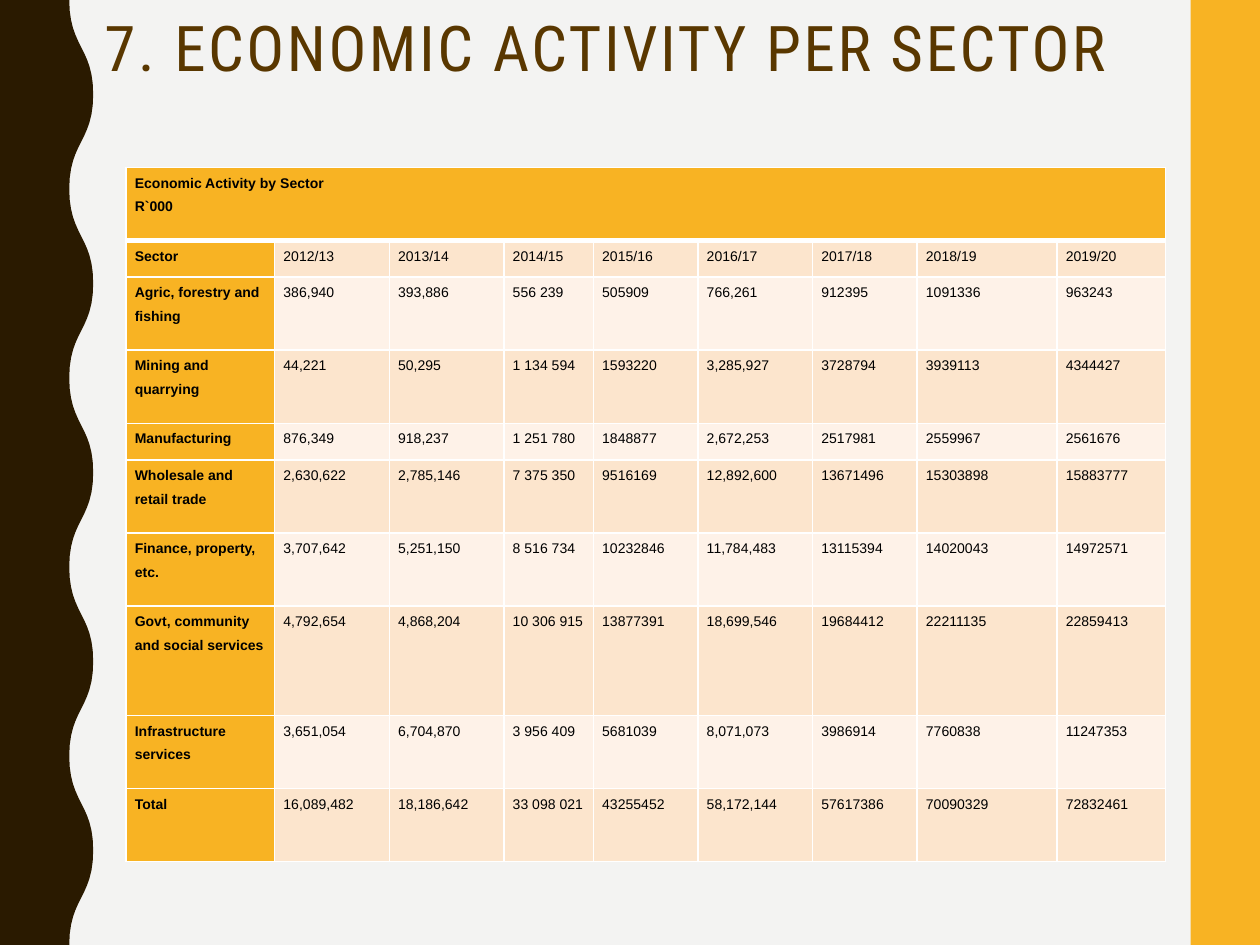
from lxml import etree
from pptx import Presentation
from pptx.dml.color import RGBColor
from pptx.enum.shapes import MSO_SHAPE
from pptx.enum.text import MSO_ANCHOR
from pptx.oxml.ns import qn
from pptx.util import Inches, Pt

RECT = MSO_SHAPE.RECTANGLE
TOP = MSO_ANCHOR.TOP
COLORS = {
    "bg": "F3F3F2", "gold": "F8B323", "brown": "2A1A00", "title": "593700",
    "band": "FCE5CD", "light": "FEF2E8", "text": "000000", "border": "FFFFFF",
}
COL_WIDTHS = [1.18, 0.91, 0.91, 0.71, 0.83, 0.91, 0.83, 1.11, 0.86]
ROW_HEIGHTS = [0.58, 0.29, 0.58, 0.58, 0.29, 0.58, 0.58, 0.87, 0.58, 0.58]
ROWS = [
    ["Economic Activity by Sector\nR`000"],
    ["Sector", "2012/13", "2013/14", "2014/15", "2015/16",
     "2016/17", "2017/18", "2018/19", "2019/20"],
    ["Agric, forestry and fishing", "386,940", "393,886", "556 239", "505909",
     "766,261", "912395", "1091336", "963243"],
    ["Mining and quarrying", "44,221", "50,295", "1 134 594", "1593220",
     "3,285,927", "3728794", "3939113", "4344427"],
    ["Manufacturing", "876,349", "918,237", "1 251 780", "1848877",
     "2,672,253", "2517981", "2559967", "2561676"],
    ["Wholesale and retail trade", "2,630,622", "2,785,146", "7 375 350", "9516169",
     "12,892,600", "13671496", "15303898", "15883777"],
    ["Finance, property, etc.", "3,707,642", "5,251,150", "8 516 734", "10232846",
     "11,784,483", "13115394", "14020043", "14972571"],
    ["Govt, community and social services", "4,792,654", "4,868,204", "10 306 915",
     "13877391", "18,699,546", "19684412", "22211135", "22859413"],
    ["Infrastructure services", "3,651,054", "6,704,870", "3 956 409", "5681039",
     "8,071,073", "3986914", "7760838", "11247353"],
    ["Total", "16,089,482", "18,186,642", "33 098 021", "43255452",
     "58,172,144", "57617386", "70090329", "72832461"],
]


def paint(sp, color):
    """Give a shape a plain fill with no line or shadow."""
    sp.shadow.inherit = False
    sp.fill.solid()
    sp.fill.fore_color.rgb = RGBColor.from_string(COLORS[color])
    sp.line.fill.background()


def set_borders(cell, widths):
    """Draw the left, right, top and bottom borders; they precede the fill in tcPr."""
    tcPr = cell._tc.get_or_add_tcPr()
    for i, (side, width) in enumerate(zip(("lnL", "lnR", "lnT", "lnB"), widths)):
        ln = etree.Element(qn("a:" + side), w=str(Pt(width)))
        fill = etree.SubElement(ln, qn("a:solidFill"))
        etree.SubElement(fill, qn("a:srgbClr"), val=COLORS["border"])
        tcPr.insert(i, ln)


prs = Presentation()
prs.slide_width, prs.slide_height = Inches(10), Inches(7.5)
s = prs.slides.add_slide(prs.slide_layouts[6])
s.background.fill.solid()
s.background.fill.fore_color.rgb = RGBColor.from_string(COLORS["bg"])

# Right-hand bars
for left, width in ((9.77, 0.23), (9.45, 0.55)):
    paint(s.shapes.add_shape(RECT, Inches(left), 0, Inches(width), Inches(7.5)), "gold")

# Wavy left edge: ten S-curves, alternately out and back
HALF_WAVE, STEPS = 0.75, 12
wave = []
for n in range(10):
    for k in range(1, STEPS + 1):
        t = k / STEPS
        swing = 3 * t**2 - 2 * t**3
        x = 0.55 + 0.19 * (swing if n % 2 == 0 else 1 - swing)
        y = HALF_WAVE * (n + 1.5 * t * (1 - t) + t**3)
        wave.append((Inches(x), Inches(y)))
fb = s.shapes.build_freeform(0, 0)
fb.add_line_segments([(Inches(0.55), 0)] + wave + [(0, Inches(7.5))], close=True)
paint(fb.convert_to_shape(), "brown")

# Title
tf = s.shapes.add_textbox(Inches(0.73), Inches(0.09), Inches(8.35), Inches(0.98)).text_frame
tf.word_wrap = True
tf.vertical_anchor = TOP
p = tf.paragraphs[0]
p.line_spacing = 0.9
r = p.add_run()
r.text = "7. ECONOMIC ACTIVITY PER SECTOR"
r.font._element.set("spc", "150")
p.font.name = "Roboto Condensed"
p.font.size = Pt(36)
p.font.color.rgb = RGBColor.from_string(COLORS["title"])

# Sector table
table = s.shapes.add_table(len(ROWS), len(COL_WIDTHS), Inches(1), Inches(1.33),
                           Inches(8.25), Inches(5.5)).table
for col, width in zip(table.columns, COL_WIDTHS):
    col.width = Inches(width)
for row, height in zip(table.rows, ROW_HEIGHTS):
    row.height = Inches(height)
table.cell(0, 0).merge(table.cell(0, len(COL_WIDTHS) - 1))

for i, texts in enumerate(ROWS):
    for j in range(len(COL_WIDTHS)):
        cell = table.cell(i, j)
        heading = i == 0 or j == 0
        color = "gold" if heading else "band" if i % 2 else "light"
        cell.fill.solid()
        cell.fill.fore_color.rgb = RGBColor.from_string(COLORS[color])
        set_borders(cell, (1, 1, 3 if i == 1 else 1, 3 if i == 0 else 1))
        cell.margin_left = cell.margin_right = Inches(0.07)
        cell.margin_top = cell.margin_bottom = 0
        if j >= len(texts):
            continue
        cell.text = texts[j]
        for p in cell.text_frame.paragraphs:
            p.line_spacing = 1.5
            if i > 1 and j > 0:
                p.space_after = Pt(8)
            p.font.name = "Arial"
            p.font.size = Pt(8)
            p.font.bold = heading
            p.font.color.rgb = RGBColor.from_string(COLORS["text"])

prs.save("out.pptx")
